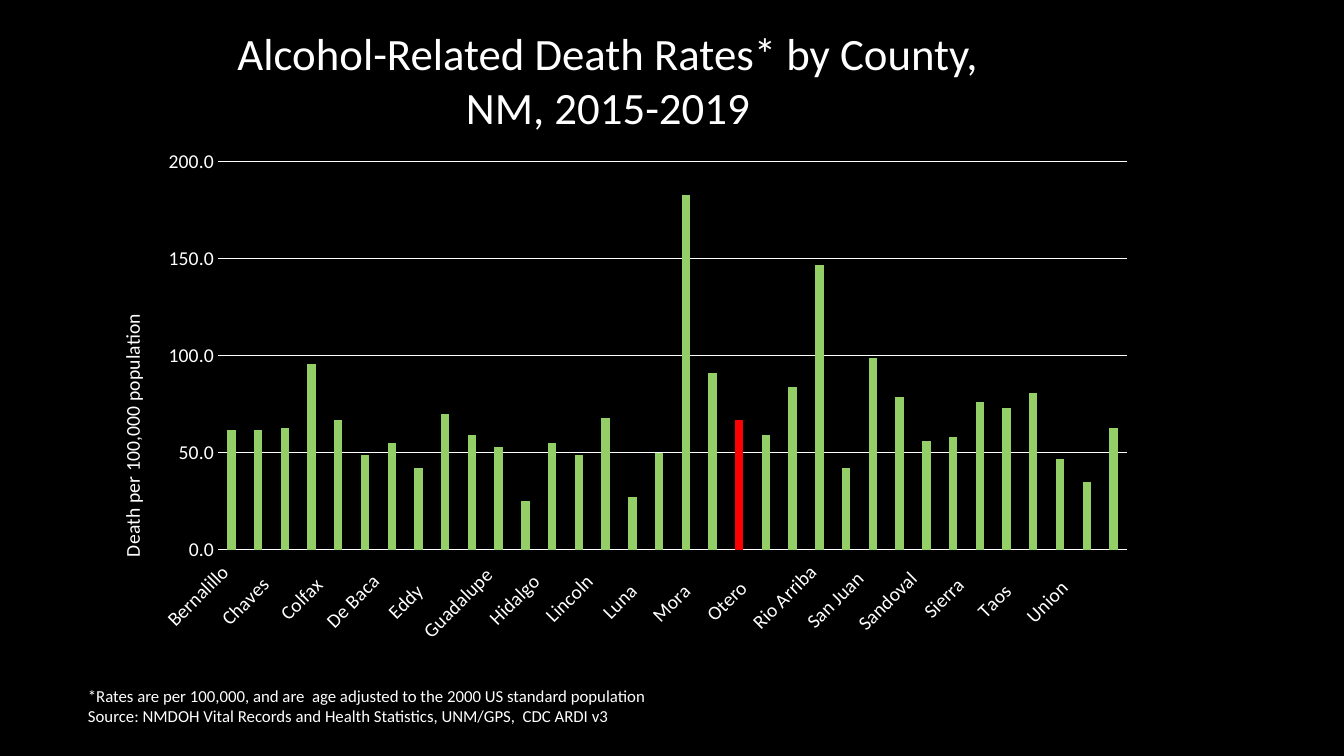
from dataclasses import dataclass

from lxml import etree
from pptx import Presentation
from pptx import util as u
from pptx.chart.data import CategoryChartData
from pptx.dml.color import RGBColor
from pptx.enum import chart as ch, text
from pptx.oxml import parse_xml
from pptx.oxml.ns import nsdecls, qn


@dataclass(frozen=True)
class Theme:
    font: str = "Calibri"
    background: RGBColor = RGBColor(0, 0, 0)
    ink: RGBColor = RGBColor(255, 255, 255)
    bar: RGBColor = RGBColor(0x94, 0xCE, 0x67)
    highlight: RGBColor = RGBColor(255, 0, 0)
    title_size: int = 32
    chart_size: int = 14
    note_size: int = 12
    line_width: float = 0.75


THEME = Theme()
EMU_PER_PX = u.Inches(1) / 100.8
LABEL_WIDTH = 12
CHART_BOX = (89, 140, 1059, 514)
PLOT_BOX = (218, 162, 909, 388)
AXIS_TITLE_AT = (115, 310)

RATES = {
    "Bernalillo": 62, "Catron": 62, "Chaves": 63, "Cibola": 96, "Colfax": 67,
    "Curry": 49, "De Baca": 55, "Dona Ana": 42, "Eddy": 70, "Grant": 59,
    "Guadalupe": 53, "Harding": 25, "Hidalgo": 55, "Lea": 49, "Lincoln": 68,
    "Los Alamos": 27, "Luna": 50, "McKinley": 183, "Mora": 91,
    "New Mexico": 67, "Otero": 59, "Quay": 84, "Rio Arriba": 147,
    "Roosevelt": 42, "San Juan": 99, "San Miguel": 79, "Sandoval": 56,
    "Santa Fe": 58, "Sierra": 76, "Socorro": 73, "Taos": 81, "Torrance": 47,
    "Union": 35, "Valencia": 63,
}


def px(n):
    return u.Emu(round(n * EMU_PER_PX))


def style_font(font, size):
    font.name = THEME.font
    font.size = u.Pt(size)
    font.bold = False
    font.color.rgb = THEME.ink


def style_line(line):
    line.color.rgb = THEME.ink
    line.width = u.Pt(THEME.line_width)


def fill_solid(fill, color):
    fill.solid()
    fill.fore_color.rgb = color


def write_lines(sp, lines, size, align):
    tf = sp.text_frame
    tf.word_wrap = True
    tf.vertical_anchor = text.MSO_ANCHOR.TOP
    tf.text = "\n".join(lines)
    for p in tf.paragraphs:
        p.alignment = align
        style_font(p.font, size)


def add_title(s, box, lines):
    sp = s.shapes.title
    sp.left, sp.top, sp.width, sp.height = map(px, box)
    write_lines(sp, lines, THEME.title_size, text.PP_ALIGN.CENTER)


def add_note(s, box, lines):
    sp = s.shapes.add_textbox(*map(px, box))
    write_lines(sp, lines, THEME.note_size, text.PP_ALIGN.LEFT)


def make_layout(x, y, w=None, h=None):
    left, top, width, height = CHART_BOX
    settings = {"xMode": "edge", "yMode": "edge", "x": (x - left) / width, "y": (y - top) / height}
    if w is not None:
        settings = {"layoutTarget": "inner", **settings, "w": w / width, "h": h / height}
    layout = parse_xml(f"<c:layout {nsdecls('c')}><c:manualLayout/></c:layout>")
    for name, value in settings.items():
        etree.SubElement(layout[0], qn(f"c:{name}")).set("val", str(value))
    return layout


def replace_layout(parent, layout, before):
    for old in parent.findall(qn("c:layout")):
        parent.remove(old)
    parent.find(qn(before)).addprevious(layout)


def rotate_text(body, degrees):
    body.set("rot", str(degrees * 60000))
    body.set("vert", "horz")


def style_category_axis(axis):
    axis.major_tick_mark = ch.XL_TICK_MARK.NONE
    style_line(axis.format.line)
    style_font(axis.tick_labels.font, THEME.chart_size)


def style_value_axis(axis, title):
    axis.minimum_scale, axis.maximum_scale, axis.major_unit = 0, 200, 50
    axis.major_tick_mark = ch.XL_TICK_MARK.NONE
    axis.format.line.fill.background()
    style_line(axis.major_gridlines.format.line)
    labels = axis.tick_labels
    labels.number_format, labels.number_format_is_linked = "0.0", False
    style_font(labels.font, THEME.chart_size)
    tf = axis.axis_title.text_frame
    tf.text = title
    style_font(tf.paragraphs[0].font, THEME.chart_size)


def arrange_chart(chart):
    area = chart.element.find(".//" + qn("c:plotArea"))
    replace_layout(area, make_layout(*PLOT_BOX), "c:barChart")
    category_axis = area.find(qn("c:catAx"))
    rotate_text(category_axis.find(f"{qn('c:txPr')}/{qn('a:bodyPr')}"), -45)
    skip = parse_xml(f'<c:tickLblSkip {nsdecls("c")} val="2"/>')
    category_axis.find(qn("c:noMultiLvlLbl")).addprevious(skip)
    title = area.find(f"{qn('c:valAx')}/{qn('c:title')}")
    rotate_text(title.find(".//" + qn("a:bodyPr")), -90)
    replace_layout(title, make_layout(*AXIS_TITLE_AT), "c:overlay")


def add_rate_chart(s, rates, highlighted, axis_title):
    data = CategoryChartData(number_format="0.0")
    data.categories = [county.ljust(LABEL_WIDTH) for county in rates]
    data.add_series("Series 1", list(rates.values()))
    frame = s.shapes.add_chart(ch.XL_CHART_TYPE.COLUMN_CLUSTERED, *map(px, CHART_BOX), data)
    chart = frame.chart
    chart.has_legend = chart.has_title = False
    style_font(chart.font, THEME.chart_size)
    plot = chart.plots[0]
    plot.gap_width, plot.overlap, plot.vary_by_categories = 219, -27, False
    series = plot.series[0]
    fill_solid(series.format.fill, THEME.bar)
    point = series.points[list(rates).index(highlighted)]
    fill_solid(point.format.fill, THEME.highlight)
    style_category_axis(chart.category_axis)
    style_value_axis(chart.value_axis, axis_title)
    arrange_chart(chart)


def main():
    prs = Presentation()
    prs.slide_width, prs.slide_height = px(1344), px(756)
    s = prs.slides.add_slide(prs.slide_layouts[5])
    fill_solid(s.background.fill, THEME.background)
    add_note(s, (78, 681, 672, 50), [
        "*Rates are per 100,000, and are  age adjusted to the 2000 US standard population",
        "Source: NMDOH Vital Records and Health Statistics, UNM/GPS,  CDC ARDI v3",
    ])
    add_rate_chart(s, RATES, "New Mexico", "Death per 100,000 population")
    add_title(s, (176, 21, 864, 149), [
        "Alcohol-Related Death Rates* by County,",
        "NM, 2015-2019",
    ])
    prs.save("out.pptx")


if __name__ == "__main__":
    main()
